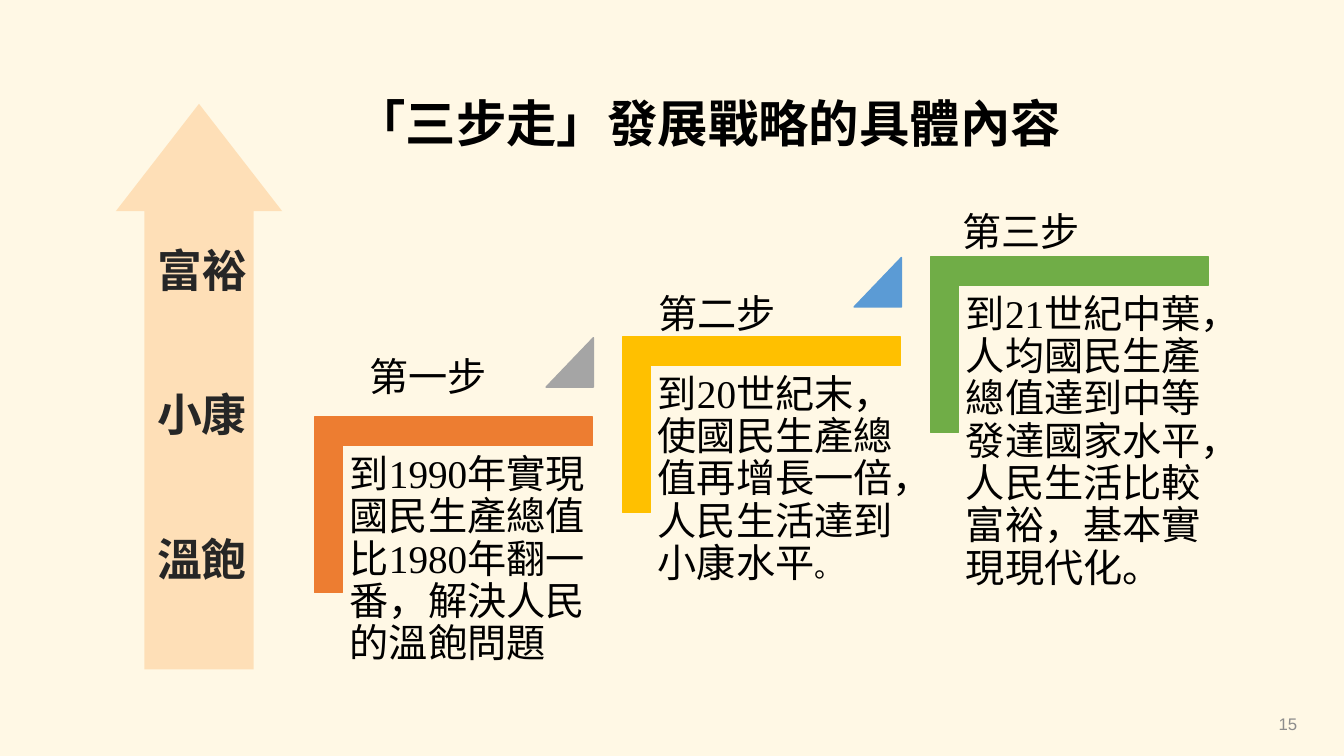
from dataclasses import dataclass

from lxml import etree
from pptx import Presentation
from pptx.dml.color import RGBColor
from pptx.enum.shapes import MSO_SHAPE
from pptx.enum.text import MSO_ANCHOR, MSO_AUTO_SIZE, PP_ALIGN
from pptx.oxml.ns import qn
from pptx.util import Pt

CORNER, TRIANGLE, ARROW = MSO_SHAPE.CORNER, MSO_SHAPE.RIGHT_TRIANGLE, MSO_SHAPE.RIGHT_ARROW
TRIANGLE = MSO_SHAPE.ISOSCELES_TRIANGLE
TOP, MIDDLE = MSO_ANCHOR.TOP, MSO_ANCHOR.MIDDLE
LEFT, RIGHT, JUSTIFY = PP_ALIGN.LEFT, PP_ALIGN.RIGHT, PP_ALIGN.JUSTIFY
SERIF, SANS = "Times New Roman", "Arial"
BLACK, DARK, GREY = "000000", "262626", "8C8C8C"

# Each step moves right by PITCH and up by RISE
PITCH, RISE = 220, 57.25
FIRST_LEFT, FIRST_TOP = 261.3, 261.3


@dataclass
class Run:
    text: str
    size: float
    color: str = BLACK
    bold: bool = False
    font: str = SERIF


@dataclass
class Step:
    name: str
    name_left: float
    name_top: float
    goal: list[Run]
    color: str
    next_color: str | None = None


@dataclass
class Level:
    name: str
    left: float
    top: float


STEPS = [
    Step("第一步", 257.8, 249.8,
         [Run("到1990年實現國民生產總值比1980年翻一番，解決人民的溫飽問題", 28)],
         "ED7D31", "A5A5A5"),
    Step("第二步", 464.4, 204.5,
         [Run("到20世紀末，使國民生產總值再增長一倍，人民生活達到小康水平", 28),
          Run("。", 20)],
         "FFC000", "5B9BD5"),
    Step("第三步", 681.8, 146.2,
         [Run("到21世紀中葉，人均國民生產總值達到中等發達國家水平，"
              "人民生活比較富裕，基本實現現代化。", 28)],
         "70AD47"),
]
LEVELS = [Level("富裕", 105.8, 150.5), Level("小康", 105.1, 253.4), Level("溫飽", 105.1, 357.1)]


def rgb(color: str) -> RGBColor:
    return RGBColor.from_string(color)


def write(box, runs: list[Run], spacing: float, align=LEFT, anchor=TOP,
          inset: float | None = None) -> None:
    frame = box.text_frame
    frame.word_wrap = True
    frame.auto_size = MSO_AUTO_SIZE.NONE
    frame.vertical_anchor = anchor
    if inset is not None:
        frame.margin_left = frame.margin_right = Pt(inset)
        frame.margin_top = frame.margin_bottom = Pt(inset)
    paragraph = frame.paragraphs[0]
    paragraph.alignment = align
    paragraph.line_spacing = spacing
    for item in runs:
        run = paragraph.add_run()
        run.text = item.text
        run.font.name = item.font
        run.font.size = Pt(item.size)
        run.font.bold = item.bold
        run.font.color.rgb = rgb(item.color)


def add_text(slide, left: float, top: float, width: float, height: float,
             runs: list[Run], spacing: float, **layout) -> None:
    box = slide.shapes.add_textbox(Pt(left), Pt(top), Pt(width), Pt(height))
    write(box, runs, spacing, **layout)


def add_block(slide, kind, left: float, top: float, width: float, height: float,
              color: str, adjustments: list[float], rotation: float = 0, outlined: bool = True):
    block = slide.shapes.add_shape(kind, Pt(left), Pt(top), Pt(width), Pt(height))
    block.shadow.inherit = False
    block.rotation = rotation
    for index, value in enumerate(adjustments):
        block.adjustments[index] = value
    block.fill.solid()
    block.fill.fore_color.rgb = rgb(color)
    if outlined:
        block.line.color.rgb = rgb(color)
        block.line.width = Pt(1)
    else:
        block.line.fill.background()
    return block


def set_opacity(block, percent: int) -> None:
    color = block.fill._xPr.find(qn("a:solidFill"))[0]
    etree.SubElement(color, qn("a:alpha")).set("val", str(percent * 1000))


def add_step(slide, index: int, step: Step) -> None:
    left, top = FIRST_LEFT + index * PITCH, FIRST_TOP - index * RISE
    add_block(slide, CORNER, left, top, 125.3, 198.7, step.color, [0.161, 0.161], rotation=90)
    add_text(slide, left - 17.2, top + 57.5, 187.5, 190, step.goal, 0.9, inset=5.8)
    if step.next_color:
        add_block(slide, TRIANGLE, left + 128.8, top - 20.1, 33.8, 35.3, step.next_color, [1])
    add_text(slide, step.name_left, step.name_top, 110, 36, [Run(step.name, 28)], 0.9, inset=5.8)


def main() -> None:
    deck = Presentation()
    deck.slide_width, deck.slide_height = Pt(960), Pt(540)
    slide = deck.slides.add_slide(deck.slide_layouts[5])
    slide.background.fill.solid()
    slide.background.fill.fore_color.rgb = rgb("FFF8E5")

    # Title
    title = slide.shapes.title
    title.left, title.top, title.width, title.height = Pt(246.6), Pt(40.3), Pt(541), Pt(72.7)
    write(title, [Run("「三步走」發展戰略的具體內容", 36, bold=True)], 1.5)

    # Staircase of the three steps
    for index, step in enumerate(STEPS):
        add_step(slide, index, step)

    # Rising arrow with the living standards
    arrow = add_block(slide, ARROW, -59.8, 216.7, 403.9, 118.8, "FD7F00", [0.657, 0.645],
                      rotation=270, outlined=False)
    set_opacity(arrow, 20)
    for level in LEVELS:
        add_text(slide, level.left, level.top, 81.4, 65.5,
                 [Run(level.name, 32, DARK, True)], 1.5, align=JUSTIFY)

    # Page number
    add_text(slide, 717.8, 502.6, 216, 28.8, [Run("15", 12, GREY, font=SANS)], 1.0,
             align=RIGHT, anchor=MIDDLE)

    deck.save("out.pptx")


if __name__ == "__main__":
    main()
